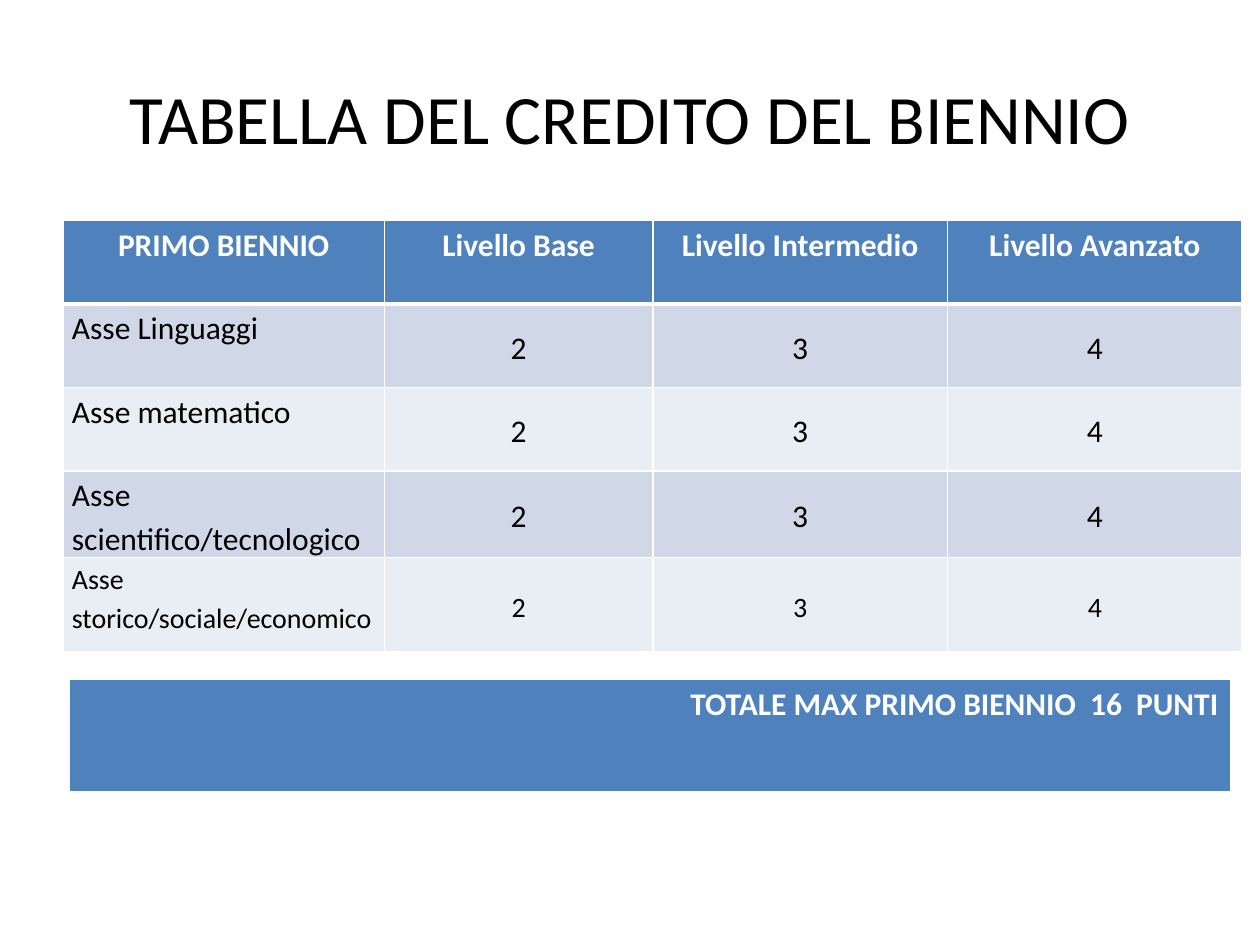
from dataclasses import dataclass

from lxml import etree
from pptx import Presentation
from pptx.dml.color import RGBColor
from pptx.enum.text import MSO_ANCHOR, PP_ALIGN
from pptx.oxml.ns import qn
from pptx.util import Cm, Pt

LEFT, MID, RIGHT = PP_ALIGN.LEFT, PP_ALIGN.CENTER, PP_ALIGN.RIGHT
TOP, CENTRE = MSO_ANCHOR.TOP, MSO_ANCHOR.MIDDLE


@dataclass(frozen=True)
class Theme:
    font: str = "Calibri"
    ink: str = "000000"
    white: str = "FFFFFF"
    head: str = "4F81BD"
    bands: tuple = ("D0D8E8", "E9EDF4")
    title: float = 39.6
    body: float = 18
    small: float = 16
    line: float = 1
    rule: float = 3


THEME = Theme()
HEADS = ["PRIMO BIENNIO", "Livello Base", "Livello Intermedio",
         "Livello Avanzato"]
AXES = ["Asse Linguaggi", "Asse matematico", "Asse scientifico/tecnologico",
        "Asse storico/sociale/economico"]
POINTS = ["2", "3", "4"]
COLS = [Cm(6.48), Cm(5.41), Cm(5.94), Cm(5.94)]
ROWS = [Cm(1.68)] * 4 + [Cm(1.9)]
TIGHT = {"margin_left": Cm(0.18), "margin_right": Cm(0.18),
         "margin_top": 0, "margin_bottom": 0}


def apply(item, values):
    for name, value in values.items():
        setattr(item, name, value)


def write(frame, text, size, color, align, bold=False, space=1.0):
    para = frame.paragraphs[0]
    apply(para, {"alignment": align, "line_spacing": space})
    run = para.add_run()
    run.text = text
    apply(run.font, {"name": THEME.font, "size": Pt(size), "bold": bold})
    run.font.color.rgb = RGBColor.from_string(color)


def edge(cell, base):
    """Draw white borders, the bottom one as wide as base."""
    props = cell._tc.get_or_add_tcPr()
    widths = {"lnL": THEME.line, "lnR": THEME.line,
              "lnT": THEME.line, "lnB": base}
    for spot, (tag, width) in enumerate(widths.items()):
        line = etree.Element(qn(f"a:{tag}"), w=str(Pt(width)))
        fill = etree.SubElement(line, qn("a:solidFill"))
        etree.SubElement(fill, qn("a:srgbClr"), val=THEME.white)
        props.insert(spot, line)


def paint(cell, color, base=THEME.line):
    cell.fill.solid()
    cell.fill.fore_color.rgb = RGBColor.from_string(color)
    edge(cell, base)


def add_grid(slide, left, top, cols, rows):
    grid = slide.shapes.add_table(len(rows), len(cols), left, top,
                                  sum(cols), sum(rows)).table
    for col, width in zip(grid.columns, cols):
        col.width = width
    for row, height in zip(grid.rows, rows):
        row.height = height
    return grid


def add_title(slide, text):
    box = slide.shapes.add_textbox(Cm(1.27), Cm(0.76), Cm(22.86), Cm(3.18))
    apply(box.text_frame, {"word_wrap": True, "vertical_anchor": CENTRE})
    write(box.text_frame, text, THEME.title, THEME.ink, MID)


def add_scores(slide):
    grid = add_grid(slide, Cm(1.27), Cm(4.45), COLS, ROWS)
    for col, text in enumerate(HEADS):
        cell = grid.cell(0, col)
        apply(cell, TIGHT)
        write(cell.text_frame, text, THEME.body, THEME.white, MID, True, 1.15)
        paint(cell, THEME.head, THEME.rule)
    for row, axis in enumerate(AXES):
        size = THEME.small if axis == AXES[-1] else THEME.body
        for col, text in enumerate([axis] + POINTS):
            cell = grid.cell(row + 1, col)
            apply(cell, {**TIGHT, "vertical_anchor": CENTRE if col else TOP})
            write(cell.text_frame, text, size, THEME.ink,
                  MID if col else LEFT, space=1.15)
            paint(cell, THEME.bands[row % 2])
            if row == 0:
                top = cell._tc.tcPr.find(qn("a:lnT"))
                top.set("w", str(Pt(THEME.rule)))


def add_total(slide, text):
    cell = add_grid(slide, Cm(1.4), Cm(13.69), [Cm(23.42)],
                    [Cm(2.31)]).cell(0, 0)
    write(cell.text_frame, text, THEME.body, THEME.white, RIGHT, True)
    paint(cell, THEME.head, THEME.rule)


def main():
    deck = Presentation()
    apply(deck, {"slide_width": Cm(25.4), "slide_height": Cm(19.05)})
    slide = deck.slides.add_slide(deck.slide_layouts[6])
    add_title(slide, "TABELLA DEL CREDITO DEL BIENNIO")
    add_scores(slide)
    add_total(slide, "TOTALE MAX PRIMO BIENNIO  16  PUNTI")
    deck.save("out.pptx")


if __name__ == "__main__":
    main()
